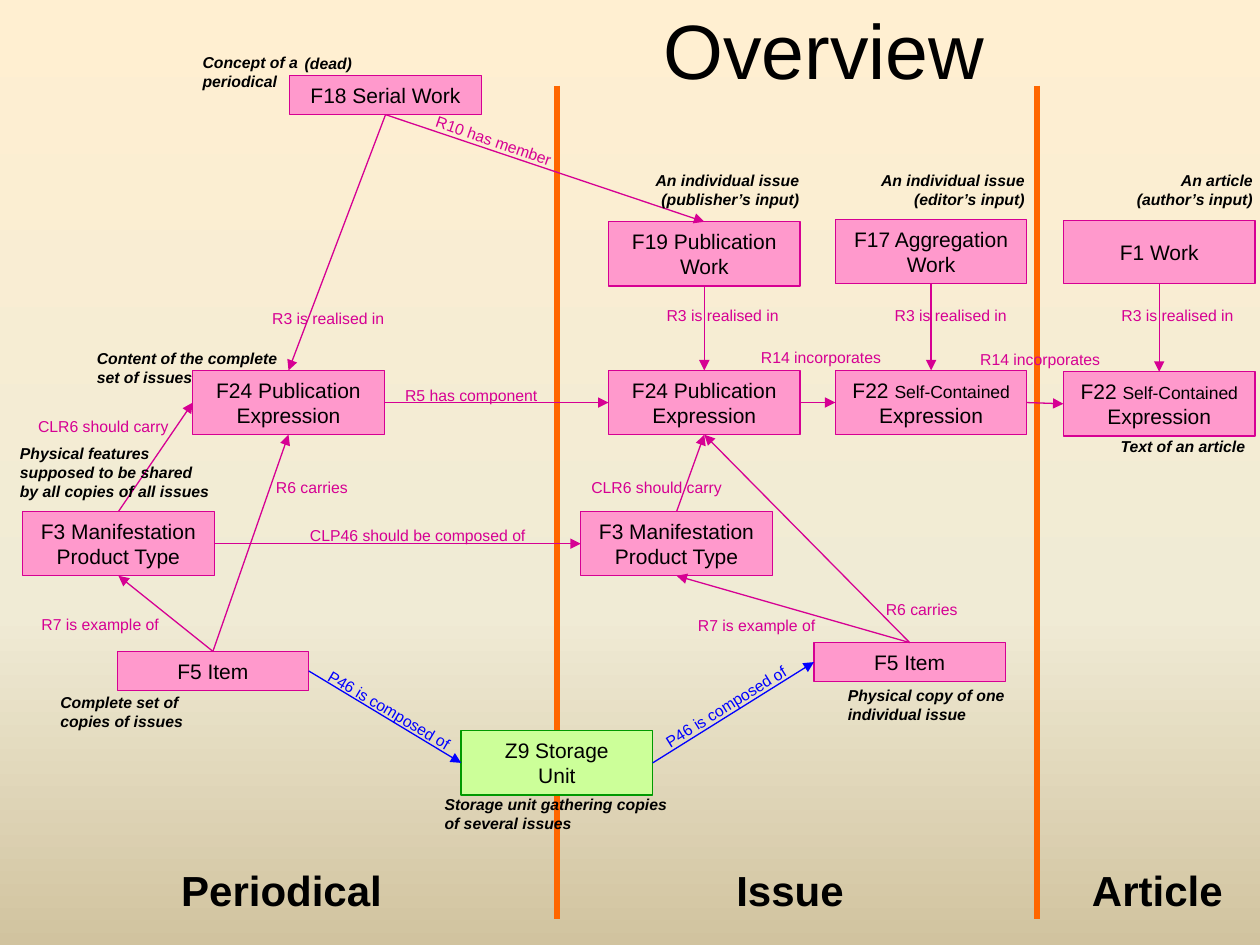
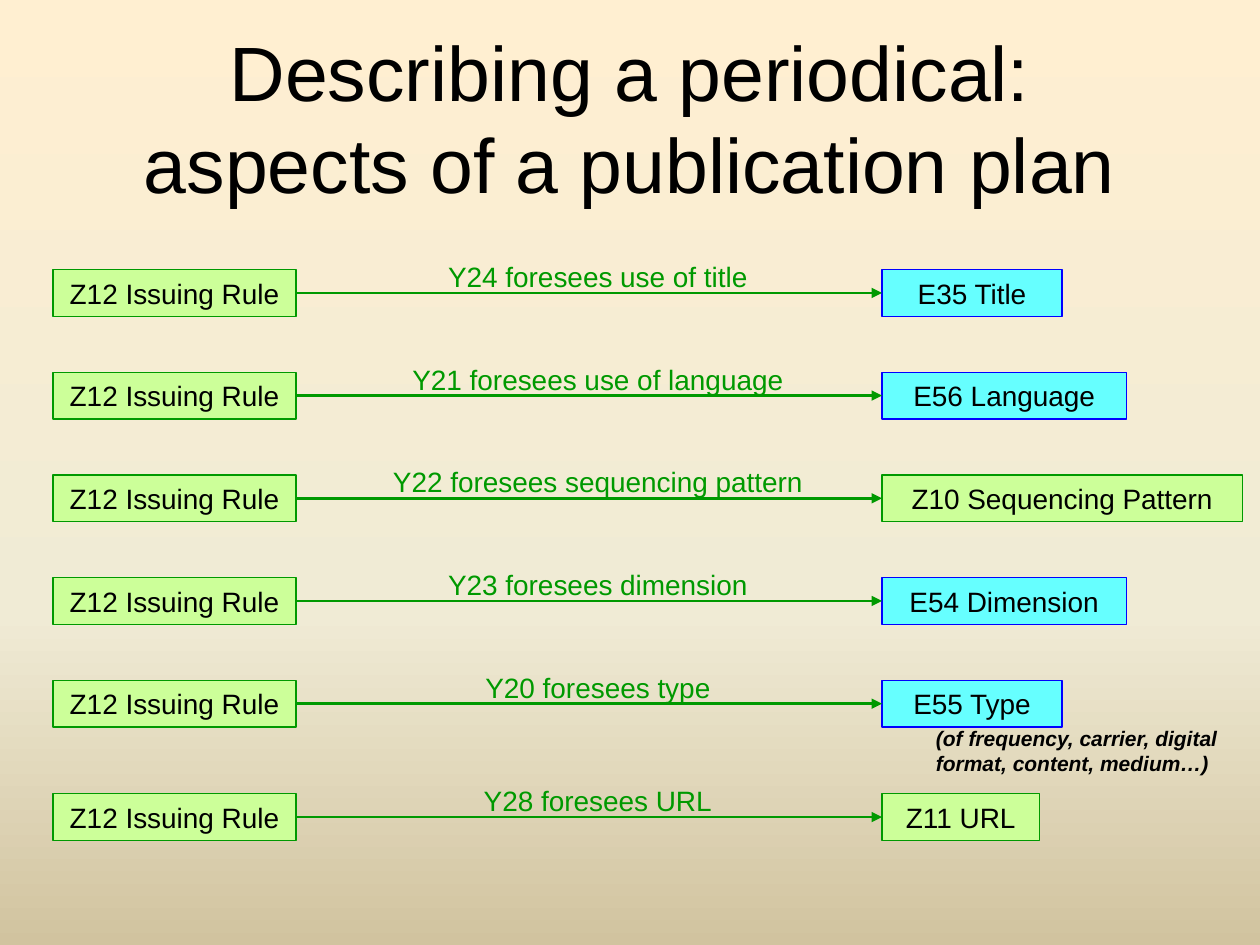
import dataclasses

import lxml.etree
import pptx
import pptx.dml.color
import pptx.enum.dml
import pptx.enum.shapes
import pptx.enum.text
import pptx.oxml.ns
import pptx.util

ALIGN = pptx.enum.text.PP_ALIGN
ANCHOR = pptx.enum.text.MSO_ANCHOR
COLUMNS, ROWS = 100, 75
SLIDE_WIDTH, SLIDE_HEIGHT = pptx.util.Inches(10), pptx.util.Inches(7.5)
TOP, LEFT, BOTTOM, RIGHT = range(4)


@dataclasses.dataclass(frozen=True)
class Theme:
    """Colours, font and type sizes shared by the slides."""
    font: str = "Arial"
    ink: str = "000000"
    divider: str = "FF6600"
    pink: tuple = ("FF99CC", "D60093")
    green: tuple = ("CCFF99", "009900")
    cyan: tuple = ("66FFFF", "0000FF")
    backdrop: tuple = ((0, "FFEFD1"), (65, "F0EBD5"), (100, "D1C39F"))
    title: int = 44
    heading: int = 24
    rule: int = 16
    node: int = 12
    node_small: int = 10
    note: int = 9


@dataclasses.dataclass(frozen=True)
class Box:
    """A rectangle in grid columns and rows."""
    left: float
    top: float
    width: float
    height: float

    def inner(self, left, top, width, height):
        """Return a box placed relative to this one."""
        return Box(self.left + left, self.top + top, width, height)

    def lengths(self):
        """Return left, top, width and height as slide lengths."""
        across, down = SLIDE_WIDTH / COLUMNS, SLIDE_HEIGHT / ROWS
        return (round(self.left * across), round(self.top * down),
                round(self.width * across), round(self.height * down))


THEME = Theme()
PAGE = Box(0, 0, COLUMNS, ROWS)
NODE_WIDTH = 15.2
ONE_LINE, TWO_LINES = 3.1, 5.1

PERIODICAL = {
    "box": Box(0, 0, 44.2, ROWS),
    "heading": ("Periodical", 13.3, 18.1),
    "nodes": {
        "periodical type": ("F3 Manifestation Product Type", 1.8, 40.6, TWO_LINES),
        "periodical item": ("F5 Item", 9.3, 51.7, ONE_LINE),
        "periodical expression": ("F24 Publication Expression", 15.3, 29.4, TWO_LINES),
        "serial work": ("F18 Serial Work", 23, 6, ONE_LINE),
    },
    "labels": [
        ("R3 is realised in", 20.6, 24, 10.9, 0),
        ("R10 has member", 33.4, 9.9, 11.6, 19),
        ("CLR6 should carry", 2, 32.6, 12.4, 0),
        ("R7 is example of", 2.3, 48.3, 11.3, 0),
        ("R6 carries", 20.9, 37.4, 7.7, 0),
        ("CLP46 should be composed of", 23.6, 41.2, 19.1, 0),
        ("R5 has component", 31.1, 30.1, 12.6, 0),
    ],
    "captions": [
        ("Complete set of copies of issues", 3.8, 54.5, 15.2, 2, ALIGN.LEFT),
        ("Content of the complete set of issues", 6.7, 27.2, 17.3, 2, ALIGN.LEFT),
        ("Concept of a\vperiodical", 15.1, 3.7, 17.3, 2, ALIGN.LEFT),
        ("(dead)", 23.2, 3.8, 6.3, 1, ALIGN.LEFT),
        ("Physical features supposed to be shared by all copies of all issues",
         0.6, 34.7, 17.3, 3, ALIGN.LEFT),
    ],
}

ISSUE = {
    "box": Box(44.2, 0, 38.1, ROWS),
    "heading": ("Issue", 13.2, 10.6),
    "nodes": {
        "publication work": ("F19 Publication Work", 4.1, 17.6, TWO_LINES),
        "issue expression": ("F24 Publication Expression", 4.1, 29.4, TWO_LINES),
        "issue type": ("F3 Manifestation Product Type", 1.9, 40.6, TWO_LINES),
        "issue item": ("F5 Item", 20.4, 51, ONE_LINE),
        "aggregation work": ("F17 Aggregation Work", 22.1, 17.4, TWO_LINES),
        "issue content": ("F22 |Self-Contained| Expression", 22.1, 29.4, TWO_LINES),
    },
    "labels": [
        ("R3 is realised in", 7.7, 23.8, 10.9, 0),
        ("R3 is realised in", 25.8, 23.8, 10.9, 0),
        ("CLR6 should carry", 1.7, 37.4, 12.4, 0),
        ("R7 is example of", 10.2, 48.4, 11.3, 0),
        ("R6 carries", 25.1, 47.1, 7.7, 0),
        ("R14 incorporates", 15.2, 27.1, 11.5, 0),
        ("R14 incorporates", 32.6, 27.3, 11.5, 0),
    ],
    "captions": [
        ("An individual issue\n(publisher’s input)", 5, 13.1, 15.2, 2, ALIGN.RIGHT),
        ("An individual issue\n(editor’s input)", 22.9, 13.1, 15.2, 2, ALIGN.RIGHT),
        ("Physical copy of one individual issue", 22.1, 53.9, 15.2, 2, ALIGN.LEFT),
    ],
}

ARTICLE = {
    "box": Box(82.3, 0, 17.7, ROWS),
    "heading": ("Article", 3.3, 12.5),
    "nodes": {
        "article work": ("F1 Work", 2.1, 17.5, 5),
        "article content": ("F22 |Self-Contained| Expression", 2.1, 29.5, TWO_LINES),
    },
    "labels": [("R3 is realised in", 5.7, 23.8, 10.9, 0)],
    "captions": [
        ("An article\n(author’s input)", 2.1, 13.1, 16, 2, ALIGN.RIGHT),
        ("Text of an article", 4.7, 34.2, 12.8, 1, ALIGN.RIGHT),
    ],
}

STORAGE = {
    "box": Box(24.4, 54.8, 39.7, 11.8),
    "nodes": {"storage": ("Z9 Storage\vUnit", 12.2, 3.2, TWO_LINES)},
    "labels": [
        ("P46 is composed of", 0, 0.3, 13, 30.7),
        ("P46 is composed of", 26.7, 0, 13, -31.8),
    ],
    "captions": [("Storage unit gathering copies of several issues",
                  9.9, 7.8, 20, 2, ALIGN.LEFT)],
}

RELATIONS = [
    ("serial work", BOTTOM, "periodical expression", TOP),
    ("serial work", BOTTOM, "publication work", TOP),
    ("periodical type", TOP, "periodical expression", LEFT),
    ("periodical item", TOP, "periodical type", BOTTOM),
    ("periodical item", TOP, "periodical expression", BOTTOM),
    ("periodical type", RIGHT, "issue type", LEFT),
    ("periodical expression", RIGHT, "issue expression", LEFT),
    ("publication work", BOTTOM, "issue expression", TOP),
    ("issue type", TOP, "issue expression", BOTTOM),
    ("issue item", TOP, "issue type", BOTTOM),
    ("issue item", TOP, "issue expression", BOTTOM),
    ("issue expression", RIGHT, "issue content", LEFT),
    ("aggregation work", BOTTOM, "issue content", TOP),
    ("issue content", RIGHT, "article content", LEFT),
    ("article work", BOTTOM, "article content", TOP),
]
COMPOSITIONS = [
    ("periodical item", RIGHT, "storage", LEFT),
    ("storage", RIGHT, "issue item", LEFT),
]

ASPECTS = [
    ("Y24 foresees use of title", 26.1, "E35 Title", 14.3, THEME.cyan),
    ("Y21 foresees use of language", 31.8, "E56 Language", 19.4, THEME.cyan),
    ("Y22 foresees sequencing pattern", 34.9, "Z10 Sequencing Pattern", 28.6, THEME.green),
    ("Y23 foresees dimension", 26.1, "E54 Dimension", 19.4, THEME.cyan),
    ("Y20 foresees type", 20.1, "E55 Type", 14.3, THEME.cyan),
    ("Y28 foresees URL", 20.3, "Z11 URL", 12.5, THEME.green),
]


def rgb(code):
    """Turn a hex code into a colour."""
    return pptx.dml.color.RGBColor.from_string(code)


def style_text(frame, size, color=THEME.ink, align=ALIGN.CENTER, strong=False, slanted=False):
    """Format every paragraph and run of a text frame."""
    for paragraph in frame.paragraphs:
        paragraph.alignment = align
        for run in paragraph.runs:
            run.font.name = THEME.font
            run.font.size = pptx.util.Pt(size)
            run.font.color.rgb = rgb(color)
            run.font.bold = strong
            run.font.italic = slanted


def add_text(slide, box, text, size, wrap=False, **style):
    """Place a text box with one text style."""
    words = slide.shapes.add_textbox(*box.lengths())
    words.text_frame.text = text
    words.text_frame.word_wrap = wrap
    style_text(words.text_frame, size, **style)
    return words


def add_node(slide, box, text, size, palette):
    """Place a class rectangle; the part between bars is set smaller."""
    fill, edge = palette
    node = slide.shapes.add_shape(pptx.enum.shapes.MSO_SHAPE.RECTANGLE, *box.lengths())
    node.shadow.inherit = False
    node.fill.solid()
    node.fill.fore_color.rgb = rgb(fill)
    node.line.color.rgb = rgb(edge)
    node.line.width = pptx.util.Pt(0.75)
    frame = node.text_frame
    frame.word_wrap = True
    frame.vertical_anchor = ANCHOR.MIDDLE
    lead, *others = text.split("|")
    frame.text = lead
    for part in others:
        frame.paragraphs[0].add_run().text = part
    style_text(frame, size)
    if others:
        frame.paragraphs[0].runs[1].font.size = pptx.util.Pt(THEME.node_small)
    return node


def add_line(slide, color, weight, ends=(0, 0, 0, 0)):
    """Place a straight line without a shadow."""
    line = slide.shapes.add_connector(pptx.enum.shapes.MSO_CONNECTOR.STRAIGHT, *ends)
    line.line.color.rgb = rgb(color)
    line.line.width = pptx.util.Pt(weight)
    lxml.etree.SubElement(line.element.spPr, pptx.oxml.ns.qn("a:effectLst"))
    return line


def add_arrow(slide, source, source_side, target, target_side, color, weight=0.75):
    """Join two nodes with an arrow pointing at the target."""
    arrow = add_line(slide, color, weight)
    arrow.begin_connect(source, source_side)
    arrow.end_connect(target, target_side)
    outline = arrow.element.spPr.get_or_add_ln()
    lxml.etree.SubElement(outline, pptx.oxml.ns.qn("a:tailEnd"), type="triangle")


def set_title(slide, box, text, anchor):
    """Fill and place the title placeholder."""
    title = slide.shapes.title
    title.left, title.top, title.width, title.height = box.lengths()
    frame = title.text_frame
    frame.text = text
    frame.auto_size = pptx.enum.text.MSO_AUTO_SIZE.NONE
    frame.vertical_anchor = anchor
    style_text(frame, THEME.title)


def paint_backdrop(master):
    """Give the master the shared vertical gradient."""
    fill = master.background.fill
    fill.gradient()
    fill.gradient_angle = 270
    qn = pptx.oxml.ns.qn
    stops = next(master.element.iter(qn("a:gsLst")))
    stops.clear()
    for share, color in THEME.backdrop:
        stop = lxml.etree.SubElement(stops, qn("a:gs"), pos=str(share * 1000))
        lxml.etree.SubElement(stop, qn("a:srgbClr"), val=color)


def draw_nodes(slide, region, palette):
    """Draw the nodes of a region and return them by key."""
    return {key: add_node(slide, region["box"].inner(left, top, NODE_WIDTH, height),
                          text, THEME.node, palette)
            for key, (text, left, top, height) in region["nodes"].items()}


def draw_words(slide, region, color):
    """Draw the heading, relation labels and captions of a region."""
    box = region["box"]
    if "heading" in region:
        text, left, width = region["heading"]
        add_text(slide, box.inner(left, 68.1, width, 5), text, THEME.heading, strong=True)
    for text, left, top, width, turn in region["labels"]:
        label = add_text(slide, box.inner(left, top, width, 2.5), text, THEME.note, color=color)
        label.rotation = turn
    for text, left, top, width, lines, align in region["captions"]:
        add_text(slide, box.inner(left, top, width, 1 + 1.5 * lines), text, THEME.note,
                 wrap=True, align=align, strong=True, slanted=True)


def draw_divider(slide, box):
    """Draw the upright line at the left edge of a region."""
    x, top, _, height = box.inner(0, 6.8, 0, 66.1).lengths()
    add_line(slide, THEME.divider, 3, (x, top, x, top + height))


def draw_overview(slide, box):
    """Draw the three regions, the storage unit and their relations."""
    set_title(slide, box.inner(49.2, -0.3, 32.4, 12.5), "Overview", ANCHOR.TOP)
    for region in (ARTICLE, ISSUE):
        draw_divider(slide, region["box"])
    palettes = [(PERIODICAL, THEME.pink), (ISSUE, THEME.pink),
                (ARTICLE, THEME.pink), (STORAGE, THEME.green)]
    nodes = {}
    for region, palette in palettes:
        nodes.update(draw_nodes(slide, region, palette))
    relation_color, composition_color = THEME.pink[1], THEME.cyan[1]
    for links, color in ((RELATIONS, relation_color), (COMPOSITIONS, composition_color)):
        for source, source_side, target, target_side in links:
            add_arrow(slide, nodes[source], source_side, nodes[target], target_side, color)
    for region, _ in palettes:
        draw_words(slide, region, composition_color if region is STORAGE else relation_color)


def draw_aspects(slide, box):
    """Draw one row per aspect: issuing rule, relation and target."""
    edge = THEME.green[1]
    last = len(ASPECTS) - 1
    for index, (relation, relation_width, target, target_width, palette) in enumerate(ASPECTS):
        top = 41.6 if index == last else 8.15 * index
        rule = add_node(slide, box.inner(0, top, 19.3, 3.7), "Z12 Issuing Rule",
                        THEME.rule, THEME.green)
        aspect = add_node(slide, box.inner(65.8, top, target_width, 3.7), target,
                          THEME.rule, palette)
        add_arrow(slide, rule, RIGHT, aspect, LEFT, edge, 1.5)
        add_text(slide, box.inner(43.25 - relation_width / 2, top - 1.3, relation_width, 3.7),
                 relation, THEME.rule, color=edge)
    add_text(slide, box.inner(69.1, 35.7, 26.7, 5),
             "(of frequency, carrier, digital format, content, medium…)", THEME.node,
             wrap=True, align=ALIGN.LEFT, strong=True, slanted=True)


def main():
    """Build both slides and save them."""
    deck = pptx.Presentation()
    deck.slide_width, deck.slide_height = SLIDE_WIDTH, SLIDE_HEIGHT
    paint_backdrop(deck.slide_master)
    title_only = deck.slide_layouts[5]
    draw_overview(deck.slides.add_slide(title_only), PAGE)
    plan = deck.slides.add_slide(title_only)
    set_title(plan, PAGE.inner(5, 3, 90, 12.5),
              "Describing a periodical:\vaspects of a publication plan", ANCHOR.MIDDLE)
    draw_aspects(plan, PAGE.inner(4.2, 21.4, 94.4, 45.3))
    deck.save("out.pptx")


if __name__ == "__main__":
    main()
